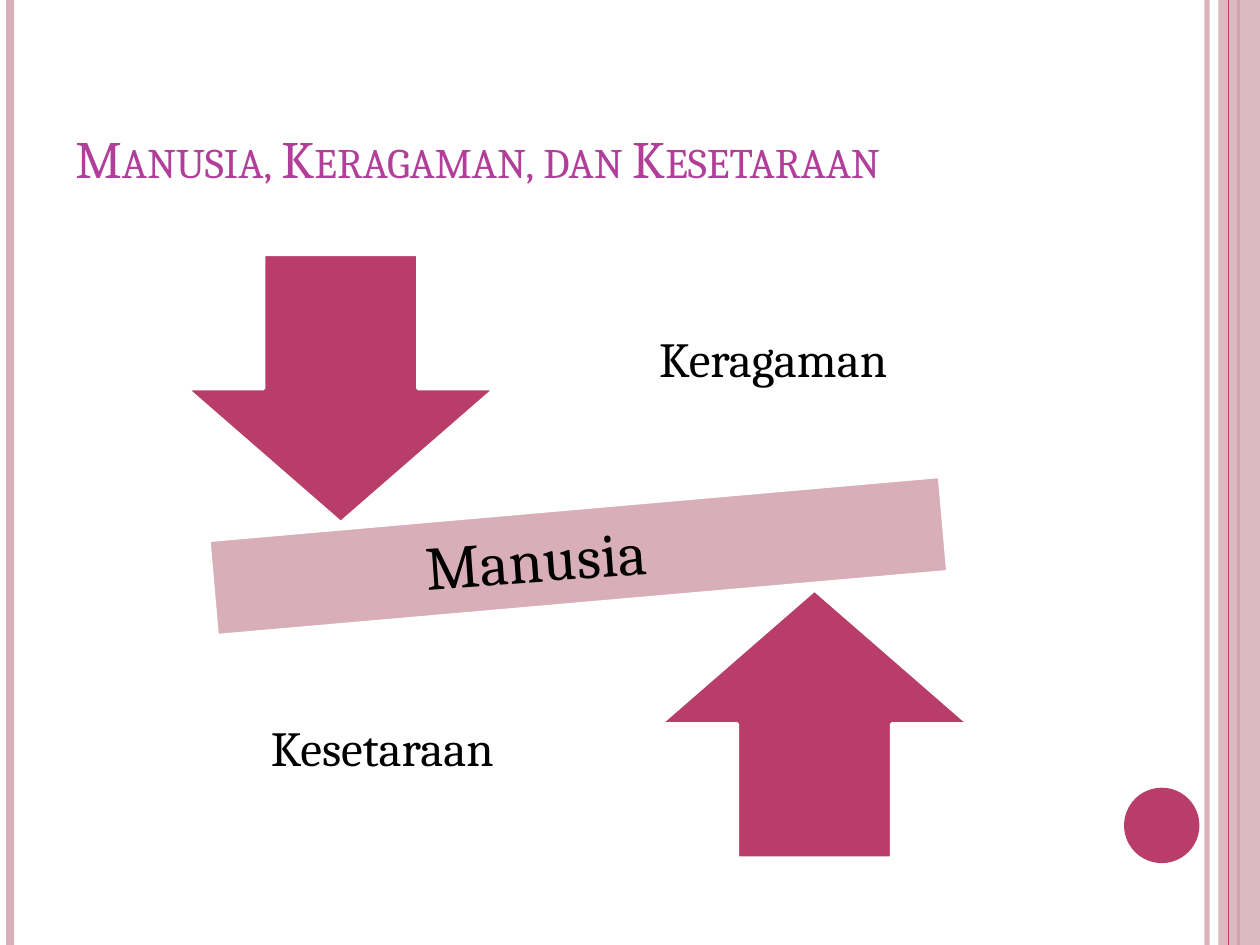
import pptx
import pptx.dml.color
import pptx.enum.shapes
import pptx.enum.text
import pptx.oxml.ns
import pptx.util
from lxml import etree
from pptx.util import Cm

COLORS = {
    "rose": "D8AFB9",
    "crimson": "B83D68",
    "title": "B13F9A",
    "text": "000000",
    "outline": "FFFFFF",
}
FONT = "Cambria"
SLIDE_WIDTH, SLIDE_HEIGHT = 25.4, 19.05
SHAPES = pptx.enum.shapes.MSO_SHAPE
ANCHOR = pptx.enum.text.MSO_ANCHOR
ALIGN = pptx.enum.text.PP_ALIGN


def rgb(name):
    return pptx.dml.color.RGBColor.from_string(COLORS[name])


def set_opacity(fill, percent):
    """Make the solid color of a fill partly transparent."""
    color = fill._xPr.find(pptx.oxml.ns.qn("a:solidFill"))[0]
    alpha = etree.SubElement(color, pptx.oxml.ns.qn("a:alpha"))
    alpha.set("val", str(percent * 1000))


def add_vertical_line(slide, x, color, width, opacity=100):
    """Draw a line over the full height of the slide."""
    line = slide.shapes.add_connector(
        pptx.enum.shapes.MSO_CONNECTOR.STRAIGHT,
        Cm(x), Cm(0), Cm(x), Cm(SLIDE_HEIGHT))
    line.line.color.rgb = rgb(color)
    line.line.width = pptx.util.Pt(width)
    etree.SubElement(line._element.spPr, pptx.oxml.ns.qn("a:effectLst"))
    if opacity < 100:
        set_opacity(line.line.fill, opacity)


def add_filled_shape(slide, kind, box, color, outlined=False, rotation=0):
    shape = slide.shapes.add_shape(kind, *map(Cm, box))
    shape.shadow.inherit = False
    shape.fill.solid()
    shape.fill.fore_color.rgb = rgb(color)
    if outlined:
        shape.line.color.rgb = rgb("outline")
        shape.line.width = pptx.util.Pt(2)
    else:
        shape.line.fill.background()
    shape.rotation = rotation
    return shape


def add_text(slide, text, box, size, color="text", anchor=ANCHOR.TOP, wrap=True):
    shape = slide.shapes.add_textbox(*map(Cm, box))
    frame = shape.text_frame
    frame.word_wrap = wrap
    frame.vertical_anchor = anchor
    frame.text = text
    font = frame.paragraphs[0].runs[0].font
    font.name = FONT
    font.size = pptx.util.Pt(size)
    font.color.rgb = rgb(color)
    return shape


def add_title(slide, text):
    title = add_text(slide, text, (1.27, 0.76, 20.75, 3.18), 30, "title", ANCHOR.BOTTOM)
    run = title.text_frame.paragraphs[0].runs[0]
    run.font._element.set("cap", "small")


def add_arrow_label(slide, text, left, top):
    label = add_text(slide, text, (left, top, 6.63, 5.69), 28, anchor=ANCHOR.MIDDLE)
    frame = label.text_frame
    frame.margin_left = frame.margin_right = Cm(0.56)
    frame.margin_top = frame.margin_bottom = Cm(0.56)
    frame.paragraphs[0].alignment = ALIGN.CENTER
    frame.paragraphs[0].line_spacing = 0.9


def add_side_decoration(slide):
    add_vertical_line(slide, 24.33, "rose", 3, opacity=93)
    add_vertical_line(slide, 0.2, "rose", 4.5)
    add_vertical_line(slide, 24.97, "crimson", 1.5)
    band = add_filled_shape(
        slide, SHAPES.RECTANGLE, (24.56, 0, SLIDE_WIDTH - 24.56, SLIDE_HEIGHT), "rose")
    set_opacity(band.fill, 87)
    add_vertical_line(slide, 24.77, "crimson", 0.75)
    add_filled_shape(slide, SHAPES.OVAL, (22.66, 15.88, 1.52, 1.52), "crimson")


def add_balance(slide):
    """Draw the tilted bar with its two opposing arrows and their labels."""
    add_filled_shape(slide, SHAPES.MATH_MINUS, (1.6, 7.11, 20.12, 8.2),
                     "rose", outlined=True, rotation=355)
    sides = [
        (SHAPES.DOWN_ARROW, 3.76, 5.13, "Keragaman", 12.27, 4.45),
        (SHAPES.UP_ARROW, 13.31, 11.89, "Kesetaraan", 4.39, 12.29),
    ]
    for kind, left, top, text, label_left, label_top in sides:
        add_filled_shape(slide, kind, (left, top, 6.22, 5.41), "crimson", outlined=True)
        add_arrow_label(slide, text, label_left, label_top)
    bar_label = add_text(slide, "Manusia", (8.33, 10.36, 5.56, 1.75), 35, wrap=False)
    bar_label.text_frame.auto_size = pptx.enum.text.MSO_AUTO_SIZE.SHAPE_TO_FIT_TEXT
    bar_label.rotation = 355.9


def main():
    presentation = pptx.Presentation()
    presentation.slide_width = Cm(SLIDE_WIDTH)
    presentation.slide_height = Cm(SLIDE_HEIGHT)
    slide = presentation.slides.add_slide(presentation.slide_layouts[6])
    add_side_decoration(slide)
    add_title(slide, "Manusia, Keragaman, dan Kesetaraan")
    add_balance(slide)
    presentation.save("out.pptx")


if __name__ == "__main__":
    main()
